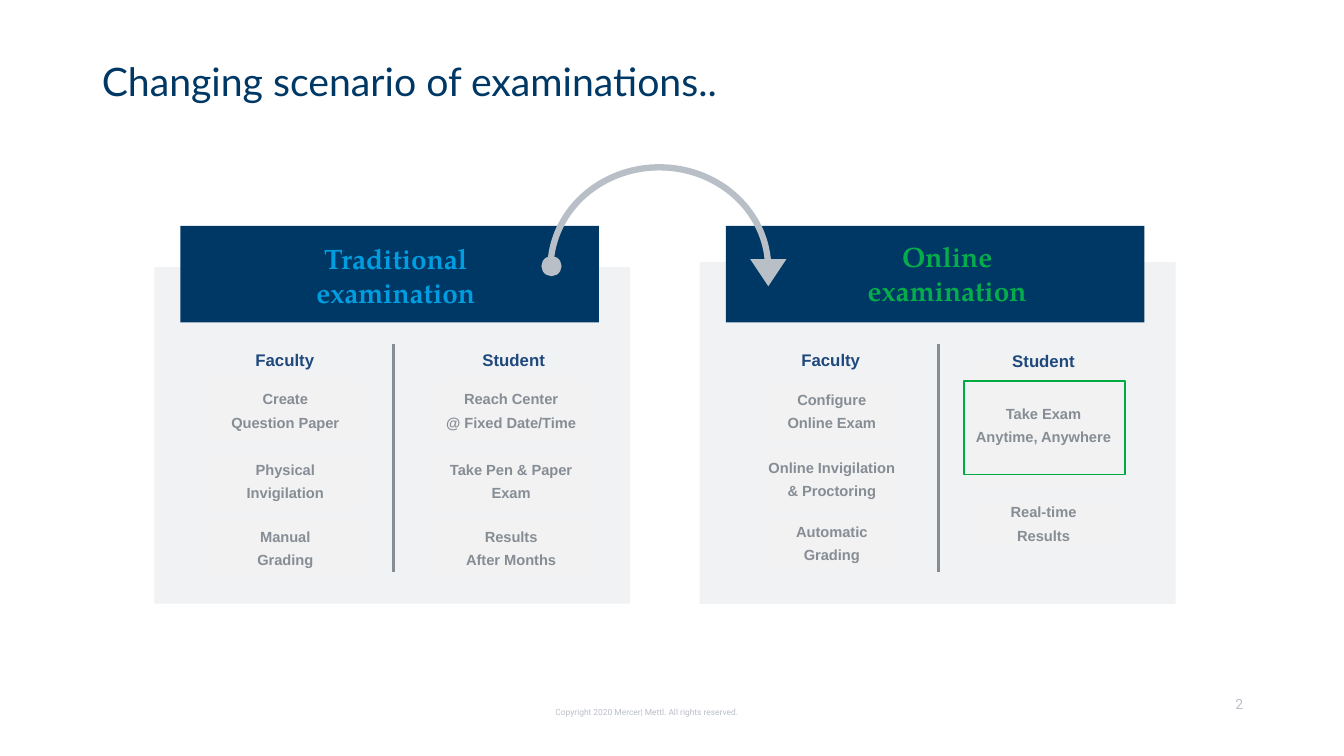
import pptx
import pptx.util
import pptx.dml.color
import pptx.enum.shapes
import pptx.enum.text
from pptx.oxml.ns import qn

Inches, Pt = pptx.util.Inches, pptx.util.Pt
SHAPE = pptx.enum.shapes.MSO_SHAPE
ALIGN = pptx.enum.text.PP_ALIGN
ANCHOR = pptx.enum.text.MSO_ANCHOR
NAVY, PANEL, CARD = "003865", "F1F2F4", "F2F2F2"
SILVER, GRAY = "B9BFC7", "868D95"

PANELS = [
    dict(box=(1.53, 2.65, 4.72, 3.34), title="Traditional\u0020examination",
         color="009DE0", title_box=(2.47, 2.4, 2.91, 0.74),
         columns=[
             ("Faculty", (2.14, 3.4, 1.37, 0.33), 2.05, 1.56,
              [(3.76, 0.63, "Create\nQuestion Paper"),
               (4.48, 0.58, "Physical\nInvigilation"),
               (5.16, 0.55, "Manual\nGrading")]),
             ("Student", (4.49, 3.4, 1.21, 0.33), 4.29, 1.56,
              [(3.76, 0.63, "Reach Center\n@ Fixed Date/Time"),
               (4.48, 0.58, "Take Pen & Paper\nExam"),
               (5.16, 0.55, "Results\nAfter Months")])]),
    dict(box=(6.94, 2.6, 4.72, 3.39), title="Online examination",
         color="05AC4B", title_box=(8.36, 2.38, 2.07, 0.77),
         columns=[
             ("Faculty", (7.62, 3.4, 1.24, 0.33), 7.54, 1.42,
              [(3.78, 0.59, "Configure\nOnline Exam"),
               (4.46, 0.59, "Online Invigilation\n& Proctoring"),
               (5.16, 0.45, "Automatic\nGrading")]),
             ("Student", (9.77, 3.41, 1.16, 0.33), 9.64, 1.42,
              [(3.58, 1.28, "Take Exam\nAnytime, Anywhere"),
               (4.97, 0.45, "Real-time\nResults")])]),
]


def rgb(color):
    return pptx.dml.color.RGBColor.from_string(color)


def inches(box):
    return [Inches(v) for v in box]


def write(tf, text, size, font, color, bold=False, align=ALIGN.LEFT,
          anchor=ANCHOR.TOP, inset=0, wrap=True, gap=0, line=None):
    tf.auto_size = pptx.enum.text.MSO_AUTO_SIZE.NONE
    tf.word_wrap = wrap
    tf.vertical_anchor = anchor
    tf.margin_left = tf.margin_right = Inches(inset)
    tf.margin_top = tf.margin_bottom = Inches(inset)
    tf.text = text
    for i, p in enumerate(tf.paragraphs):
        p.alignment = align
        p.space_before = Pt(gap if i else 0)
        p.space_after = Pt(gap)
        if line:
            p.line_spacing = line
        p.font.size, p.font.name, p.font.bold = Pt(size), font, bold
        p.font.color.rgb = rgb(color)


def add_text(s, box, *args, **kwargs):
    write(s.shapes.add_textbox(*inches(box)).text_frame, *args, **kwargs)


def add_shape(s, kind, box, fill=None, line=None, width=1):
    sp = s.shapes.add_shape(kind, *inches(box))
    sp.shadow.inherit = False
    if fill:
        sp.fill.solid()
        sp.fill.fore_color.rgb = rgb(fill)
    else:
        sp.fill.background()
    if line:
        sp.line.color.rgb = rgb(line)
        sp.line.width = Pt(width)
    else:
        sp.line.fill.background()
    return sp


def add_divider(s, x, top, bottom):
    c = s.shapes.add_connector(pptx.enum.shapes.MSO_CONNECTOR.STRAIGHT,
                               *inches((x, top, x, bottom)))
    c.line.color.rgb = rgb(GRAY)
    c.line.width = Pt(2.25)
    props = c._element.spPr
    props.append(props.makeelement(qn("a:effectLst"), {}))


def add_column(s, label, label_box, left, width, cards):
    for top, height, text in cards:
        sp = add_shape(s, SHAPE.RECTANGLE, (left, top, width, height), CARD)
        write(sp.text_frame, text, 10.5, "Arial", GRAY, True, ALIGN.CENTER,
              ANCHOR.MIDDLE, 0.08, False, 2)
    add_text(s, label_box, label, 12, "Arial", "1F497D", True, ALIGN.CENTER,
             ANCHOR.MIDDLE)


def add_panel(s, box, title, color, title_box, columns):
    left = box[0]
    add_shape(s, SHAPE.RECTANGLE, box, PANEL)
    add_shape(s, SHAPE.RECTANGLE, (left + 0.26, 2.24, 4.15, 0.96), NAVY)
    add_text(s, title_box, title, 20, "TeX Gyre Pagella", color, True,
             ALIGN.CENTER)
    for column in columns:
        add_column(s, *column)
    add_divider(s, left + 2.37, 3.41, 5.67)


def add_transition(s, left, top, width, height):
    arc = add_shape(s, SHAPE.ARC, (left, top, width, height),
                    line=SILVER, width=4.5)
    arc.adjustments[0], arc.adjustments[1] = 109.12, 0
    add_shape(s, SHAPE.OVAL, (left - 0.09, top + 0.88, 0.2, 0.2), SILVER)
    head = add_shape(s, SHAPE.ISOSCELES_TRIANGLE,
                     (left + width - 0.18, top + 0.91, 0.36, 0.27), SILVER)
    head.rotation = 180


def add_title(s, box, text):
    sp = s.shapes.title
    sp.left, sp.top, sp.width, sp.height = inches(box)
    write(sp.text_frame, text, 28, "Lato", NAVY, line=Pt(28.6))


def add_footer(s, left, top):
    add_text(s, (left, top, 1.84, 0.11),
             "Copyright 2020 Mercer| Mettl. All rights reserved.",
             6, "Roboto", SILVER, line=0.9)
    add_text(s, (left + 6.46, top - 0.13, 0.36, 0.17), "2", 10, "Roboto",
             SILVER, align=ALIGN.RIGHT)


def main():
    prs = pptx.Presentation()
    prs.slide_width, prs.slide_height = Inches(13.33), Inches(7.5)
    s = prs.slides.add_slide(prs.slide_layouts[5])
    add_footer(s, 5.51, 7.03)
    add_title(s, (1.01, 0.64, 9.21, 0.9), "Changing scenario of examinations..")
    for panel in PANELS:
        add_panel(s, **panel)
    add_shape(s, SHAPE.RECTANGLE, (9.56, 3.78, 1.6, 0.93), line="00AC41")
    add_transition(s, 5.46, 1.66, 2.16, 2.01)
    prs.save("out.pptx")


if __name__ == "__main__":
    main()
